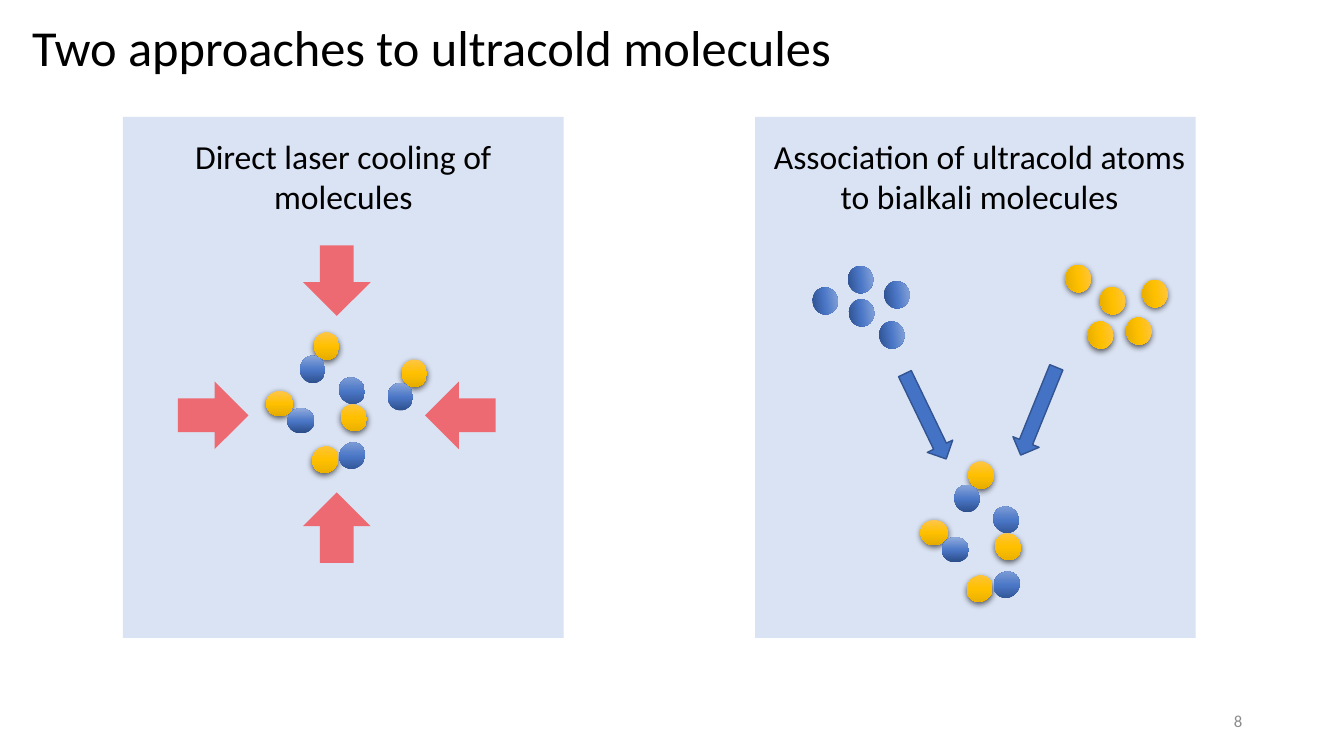
from copy import deepcopy
from math import cos, radians, sin

from pptx import Presentation
from pptx.dml.color import RGBColor
from pptx.enum.shapes import MSO_SHAPE
from pptx.enum.text import MSO_ANCHOR, PP_ALIGN
from pptx.oxml import parse_xml
from pptx.oxml.ns import nsdecls
from pptx.util import Inches, Pt

TITLE = "Two approaches to ultracold molecules"
PAGE_NUMBER = "8"
LEFT_HEADING = "Direct laser cooling of molecules"
RIGHT_HEADING = "Association of ultracold atoms\vto bialkali molecules"

BLACK = RGBColor(0x00, 0x00, 0x00)
GRAY = RGBColor(0x8C, 0x8C, 0x8C)
PANEL_BLUE = RGBColor(0xDA, 0xE3, 0xF3)
LASER_RED = RGBColor(0xFF, 0x00, 0x00)
ARROW_BLUE = RGBColor(0x44, 0x72, 0xC4)
ARROW_EDGE = RGBColor(0x32, 0x54, 0x91)
YELLOW_STOPS = [
    (0, RGBColor(0xFF, 0xC6, 0x4B)),
    (0.5, RGBColor(0xFF, 0xC0, 0x00)),
    (1, RGBColor(0xE3, 0xAB, 0x00)),
]
BLUE_STOPS = [
    (0, RGBColor(0x2A, 0x4B, 0x86)),
    (0.48, RGBColor(0x4A, 0x76, 0xC6)),
    (1, RGBColor(0x8F, 0xAA, 0xDC)),
]

SLIDE_WIDTH, SLIDE_HEIGHT = 13.33, 7.5
PANEL_TOP, PANEL_WIDTH, PANEL_HEIGHT = 1.16, 4.37, 5.17
PANEL_LEFTS = (1.22, 7.49)
HEADING_TOP, HEADING_HEIGHT = 1.3, 0.91
ATOM_WIDTH, ATOM_HEIGHT = 0.27, 0.25
BOND_X, BOND_Y = 0.21, 0.17
ATOM_ROTATION = 81.9

MOLECULES = [
    (2.88, 4.09, 0),
    (3.5, 4.01, 226.8),
    (3.36, 4.54, 312.4),
    (3.17, 3.55, 81.9),
    (4.04, 3.82, 81.9),
]
ASSOCIATED_COUNT = 4
ASSOCIATED_SHIFT = (6.49, 1.28)
YELLOW_ATOMS = [(10.9, 2.86), (11.16, 3.16), (10.78, 3.2), (11.32, 2.79), (10.56, 2.64)]
BLUE_ATOMS = [(8.05, 2.86), (8.4, 2.65), (8.41, 2.98), (8.76, 2.8), (8.71, 3.2)]

LASER_CENTER_X, LASER_DISTANCE = 3.34, 1.225
LASER_WIDTH, LASER_HEIGHT = 0.7, 0.67
LASERS = [(0, 4.12), (180, 4.12), (270, 4.01), (90, 4.01)]
MERGE_ARROWS = [(9.04, 3.66, 334.2), (10.16, 3.61, 22.1)]
MERGE_WIDTH, MERGE_HEIGHT = 0.28, 0.94


def add_text(slide, box, text, size, color=BLACK, align=PP_ALIGN.LEFT, anchor=MSO_ANCHOR.MIDDLE):
    frame = slide.shapes.add_textbox(*map(Inches, box)).text_frame
    frame.word_wrap = True
    frame.vertical_anchor = anchor
    frame.text = text
    paragraph = frame.paragraphs[0]
    paragraph.alignment = align
    for run in paragraph.runs:
        run.font.name = "Calibri"
        run.font.size = Pt(size)
        run.font.color.rgb = color
    return paragraph


def add_plain_shape(shapes, kind, box, rotation=0):
    shape = shapes.add_shape(kind, *map(Inches, box))
    shape.rotation = rotation
    shape.shadow.inherit = False
    shape.line.fill.background()
    return shape


def add_solid_shape(shapes, kind, box, color, rotation=0):
    shape = add_plain_shape(shapes, kind, box, rotation)
    shape.fill.solid()
    shape.fill.fore_color.rgb = color
    return shape


def add_atom(shapes, left, top, yellow, rotation=0):
    box = (left, top, ATOM_WIDTH, ATOM_HEIGHT)
    atom = add_plain_shape(shapes, MSO_SHAPE.OVAL, box, rotation)
    atom.fill.gradient()
    atom.fill.gradient_angle = 270 if yellow else 90
    stop_list = atom._element.xpath(".//a:gsLst")[0]
    stop_list.append(deepcopy(stop_list[0]))
    colors = YELLOW_STOPS if yellow else BLUE_STOPS
    for stop, (position, color) in zip(atom.fill.gradient_stops, colors):
        stop.position = position
        stop.color.rgb = color
    if yellow:
        atom._element.xpath(".//a:effectLst")[0].append(parse_xml(
            f'<a:outerShdw {nsdecls("a")} blurRad="57150" dist="19050" dir="5400000" '
            'algn="ctr" rotWithShape="0"><a:srgbClr val="000000">'
            '<a:alpha val="63000"/></a:srgbClr></a:outerShdw>'
        ))


def add_molecule(slide, center_x, center_y, rotation):
    group = slide.shapes.add_group_shape()
    left = center_x - (ATOM_WIDTH + BOND_X) / 2
    top = center_y - (ATOM_HEIGHT + BOND_Y) / 2
    add_atom(group.shapes, left, top, True)
    add_atom(group.shapes, left + BOND_X, top + BOND_Y, False)
    group.rotation = rotation


def add_laser(slide, angle, center_y):
    left = LASER_CENTER_X - LASER_DISTANCE * cos(radians(angle)) - LASER_WIDTH / 2
    top = center_y - LASER_DISTANCE * sin(radians(angle)) - LASER_HEIGHT / 2
    box = (left, top, LASER_WIDTH, LASER_HEIGHT)
    laser = add_solid_shape(slide.shapes, MSO_SHAPE.RIGHT_ARROW, box, LASER_RED, angle)
    color = laser._element.xpath("./p:spPr/a:solidFill/a:srgbClr")[0]
    color.append(parse_xml(f'<a:alpha {nsdecls("a")} val="53000"/>'))


def add_panel(slide, left, heading, heading_left, heading_width):
    box = (left, PANEL_TOP, PANEL_WIDTH, PANEL_HEIGHT)
    add_solid_shape(slide.shapes, MSO_SHAPE.RECTANGLE, box, PANEL_BLUE)
    heading_box = (heading_left, HEADING_TOP, heading_width, HEADING_HEIGHT)
    add_text(slide, heading_box, heading, 24, align=PP_ALIGN.CENTER, anchor=MSO_ANCHOR.TOP)


def main():
    presentation = Presentation()
    presentation.slide_width = Inches(SLIDE_WIDTH)
    presentation.slide_height = Inches(SLIDE_HEIGHT)
    slide = presentation.slides.add_slide(presentation.slide_layouts[6])

    title = add_text(slide, (0.22, -0.23, 11.5, 1.45), TITLE, 36)
    title.line_spacing = 0.9

    add_panel(slide, PANEL_LEFTS[0], LEFT_HEADING, 1.82, 3.17)
    for molecule in MOLECULES:
        add_molecule(slide, *molecule)
    for laser in LASERS:
        add_laser(slide, *laser)

    add_panel(slide, PANEL_LEFTS[1], RIGHT_HEADING, 7.39, 4.65)
    shift_x, shift_y = ASSOCIATED_SHIFT
    for center_x, center_y, rotation in MOLECULES[:ASSOCIATED_COUNT]:
        add_molecule(slide, center_x + shift_x, center_y + shift_y, rotation)
    for atoms, yellow in ((YELLOW_ATOMS, True), (BLUE_ATOMS, False)):
        for left, top in atoms:
            add_atom(slide.shapes, left, top, yellow, ATOM_ROTATION)
    for left, top, rotation in MERGE_ARROWS:
        box = (left, top, MERGE_WIDTH, MERGE_HEIGHT)
        arrow = add_solid_shape(slide.shapes, MSO_SHAPE.DOWN_ARROW, box, ARROW_BLUE, rotation)
        arrow.line.color.rgb = ARROW_EDGE
        arrow.line.width = Pt(1)

    add_text(slide, (9.42, 6.95, 3, 0.4), PAGE_NUMBER, 12, GRAY, PP_ALIGN.RIGHT)
    presentation.save("out.pptx")


if __name__ == "__main__":
    main()
